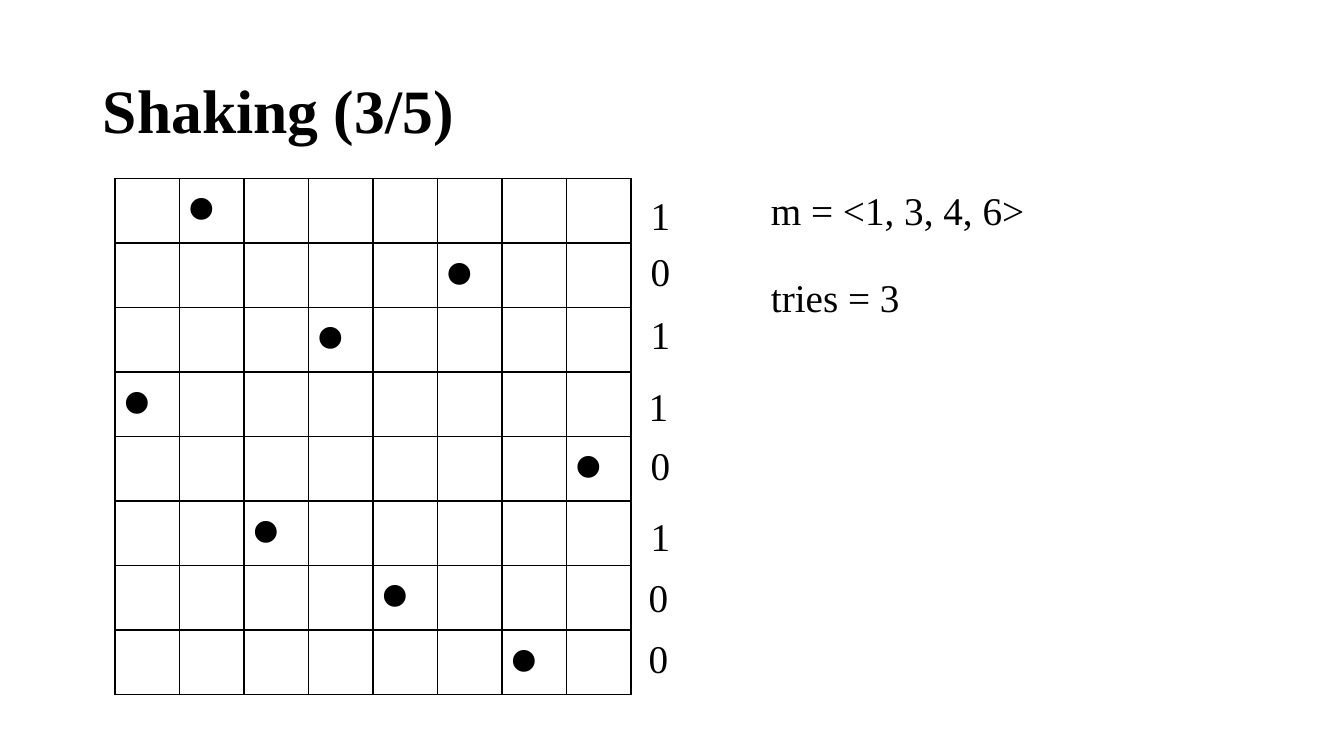
"""Build the "Shaking (3/5)" slide: an 8 by 8 queens board with its row bits."""
from dataclasses import dataclass

from lxml.etree import SubElement
from pptx import Presentation
from pptx.dml.color import RGBColor
from pptx.enum.text import MSO_ANCHOR, MSO_AUTO_SIZE, PP_ALIGN
from pptx.oxml.ns import qn
from pptx.util import Cm, Pt

SERIF = "Times New Roman"
BLACK = "000000"
SIZE = 8
CELL = 1.625
QUEEN_COLUMNS = [1, 5, 3, 0, 7, 2, 4, 6]


@dataclass
class Label:
    text: str
    left: float
    top: float
    width: float = 1.02
    height: float = 1.45


LABELS = [
    Label("1", 16.15, 4.7),
    Label("0", 16.15, 6.1),
    Label("1", 16.15, 7.7),
    Label("1", 16.1, 9.5),
    Label("0", 16.15, 11),
    Label("1", 16.15, 12.78),
    Label("0", 16.1, 14.33),
    Label("0", 16.1, 15.85),
    Label("m = <1, 3, 4, 6>", 19.18, 4.58, 6.96),
    Label("tries = 3", 19.18, 6.75, 3.78),
]


def rgb(color: str) -> RGBColor:
    return RGBColor.from_string(color)


def add_run(p, text: str, size: float, font: str = SERIF, bold: bool = False) -> None:
    r = p.add_run()
    r.text = text
    r.font.size = Pt(size)
    r.font.name = font
    r.font.bold = bold
    r.font.color.rgb = rgb(BLACK)


def add_title(s, text: str) -> None:
    sp = s.shapes.title
    sp.left, sp.top, sp.width, sp.height = Cm(2.34), Cm(1.02), Cm(29.21), Cm(3.68)
    tf = sp.text_frame
    tf.vertical_anchor = MSO_ANCHOR.MIDDLE
    p = tf.paragraphs[0]
    p.alignment = PP_ALIGN.LEFT
    p.line_spacing = 0.9
    add_run(p, text, 44, bold=True)


def format_cell(cell) -> None:
    tcPr = cell._tc.get_or_add_tcPr()
    for side in ("a:lnL", "a:lnR", "a:lnT", "a:lnB"):
        ln = SubElement(tcPr, qn(side), w=str(Pt(1)))
        fill = SubElement(ln, qn("a:solidFill"))
        SubElement(fill, qn("a:srgbClr"), val=BLACK)
    cell.fill.background()


def add_board(s, left: float, top: float) -> None:
    side = Cm(SIZE * CELL)
    table = s.shapes.add_table(SIZE, SIZE, Cm(left), Cm(top), side, side).table
    table.first_row = table.horz_banding = False
    for cell in table.iter_cells():
        format_cell(cell)
    for row, column in enumerate(QUEEN_COLUMNS):
        p = table.cell(row, column).text_frame.paragraphs[0]
        add_run(p, "⚫", 28, "Calibri")


def add_label(s, label: Label) -> None:
    sp = s.shapes.add_textbox(Cm(label.left), Cm(label.top), Cm(label.width), Cm(label.height))
    tf = sp.text_frame
    tf.word_wrap = False
    tf.auto_size = MSO_AUTO_SIZE.SHAPE_TO_FIT_TEXT
    add_run(tf.paragraphs[0], label.text, 28)


def main() -> None:
    prs = Presentation()
    prs.slide_width, prs.slide_height = Cm(33.87), Cm(19.05)
    s = prs.slides.add_slide(prs.slide_layouts[5])
    add_title(s, "Shaking (3/5)")
    add_board(s, 2.9, 4.5)
    for label in LABELS:
        add_label(s, label)
    prs.save("out.pptx")


if __name__ == "__main__":
    main()
